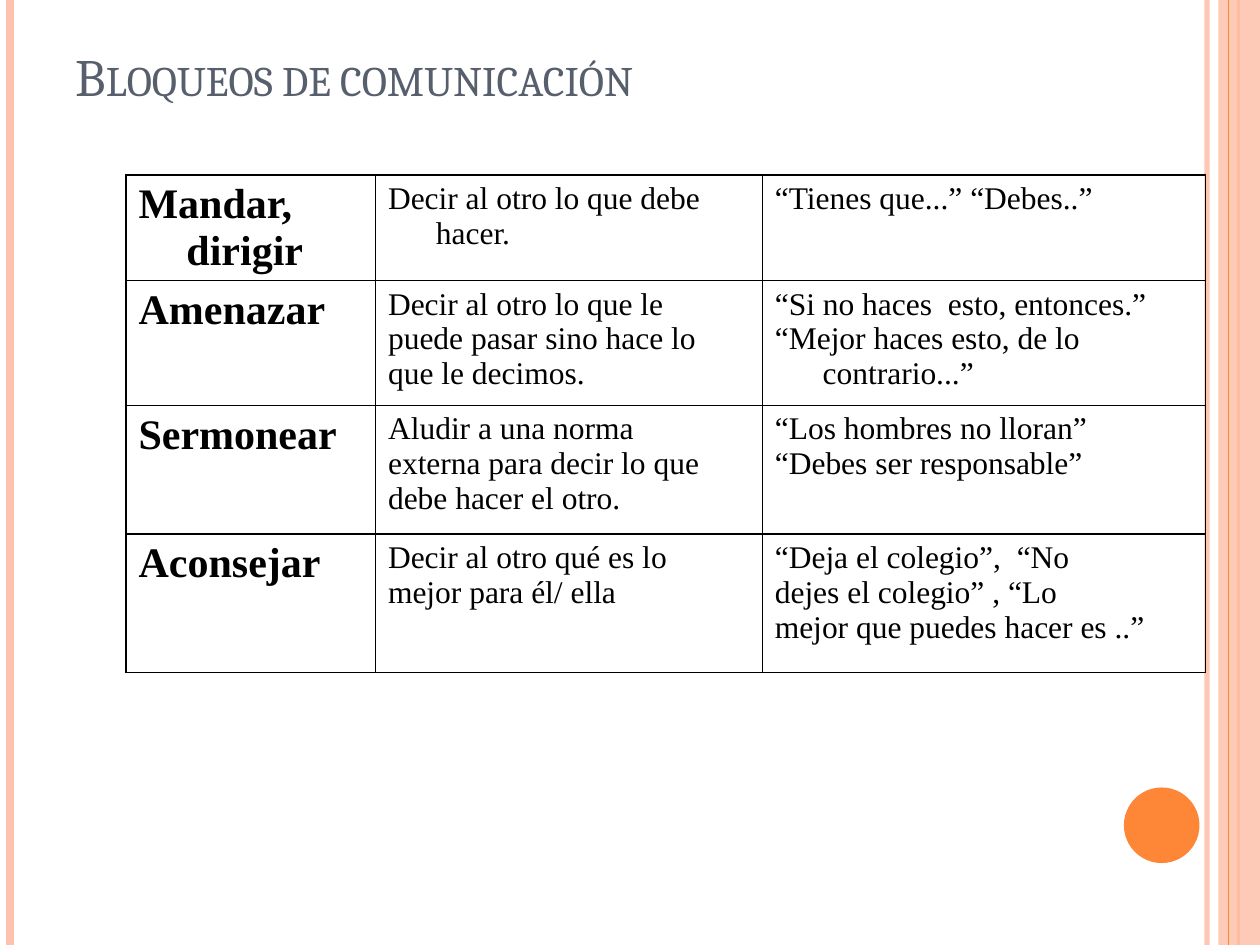
from dataclasses import dataclass

from lxml.etree import SubElement
from pptx import Presentation
from pptx.dml.color import RGBColor
from pptx.enum.shapes import MSO_CONNECTOR as Connector, MSO_SHAPE as Preset
from pptx.enum.text import MSO_ANCHOR as Anchor, PP_ALIGN as Align
from pptx.oxml.ns import qn
from pptx.util import Inches, Pt

COLORS = {"peach": "FEC3AE", "orange": "FE8637", "slate": "575F6D", "black": "000000"}
SLIDE_WIDTH, SLIDE_HEIGHT = 10, 7.5
COLUMN_WIDTHS = (1.98, 3.07, 3.52)
HANGING_INDENT = 0.38


@dataclass
class Stripe:
    x: float
    color: str
    weight: float
    opacity: int = 100


@dataclass
class Block:
    name: str
    meaning: list[str]
    examples: list[str]
    height: float
    align: Align = Align.LEFT


BACK_STRIPES = [
    Stripe(9.58, "peach", 3, 93),
    Stripe(0.08, "peach", 4.5),
    Stripe(9.83, "orange", 1.5),
]
FRONT_STRIPE = Stripe(9.75, "orange", 0.75)

BLOCKS = [
    Block("Mandar, dirigir", ["Decir al otro lo que debe hacer."],
          ["“Tienes que...” “Debes..”"], 0.83),
    Block("Amenazar",
          ["Decir al otro lo que le", "puede pasar sino hace lo", "que le decimos."],
          ["“Si no haces  esto, entonces.”", "“Mejor haces esto, de lo contrario...”"], 0.99),
    Block("Sermonear",
          ["Aludir a una norma", "externa para decir lo que", "debe hacer el otro."],
          ["“Los hombres no lloran”", "“Debes ser responsable”"], 1.02),
    Block("Aconsejar", ["Decir al otro qué es lo", "mejor para él/ ella"],
          ["“Deja el colegio”,  “No", "dejes el colegio” , “Lo", "mejor que puedes hacer es ..”"],
          1.1, Align.JUSTIFY),
]


def rgb(name: str) -> RGBColor:
    return RGBColor.from_string(COLORS[name])


def set_opacity(properties, percent: int) -> None:
    color = next(properties.iter(qn("a:srgbClr")))
    SubElement(color, qn("a:alpha"), val=str(percent * 1000))


def draw_stripe(slide, stripe: Stripe) -> None:
    x = Inches(stripe.x)
    line = slide.shapes.add_connector(Connector.STRAIGHT, x, 0, x, Inches(SLIDE_HEIGHT))
    line.line.color.rgb = rgb(stripe.color)
    line.line.width = Pt(stripe.weight)
    properties = line._element.spPr
    if stripe.opacity < 100:
        set_opacity(properties, stripe.opacity)
    SubElement(properties, qn("a:effectLst"))


def draw_shape(slide, preset: Preset, box: tuple, color: str, opacity: int = 100) -> None:
    shape = slide.shapes.add_shape(preset, *map(Inches, box))
    shape.shadow.inherit = False
    shape.fill.solid()
    shape.fill.fore_color.rgb = rgb(color)
    shape.line.fill.background()
    if opacity < 100:
        set_opacity(shape._element.spPr, opacity)


def add_text(paragraph, text: str, *, size: float, font: str, color: str,
             bold: bool = False, small_caps: bool = False, align: Align = Align.LEFT) -> None:
    paragraph.alignment = align
    run = paragraph.add_run()
    run.text = text
    run.font.size = Pt(size)
    run.font.name = font
    run.font.bold = bold
    run.font.color.rgb = rgb(color)
    if small_caps:
        run.font._element.set("cap", "small")


def draw_borders(cell) -> None:
    properties = cell._tc.get_or_add_tcPr()
    for position, side in enumerate(("a:lnL", "a:lnR", "a:lnT", "a:lnB")):
        border = SubElement(properties, qn(side), w=str(Pt(1)))
        fill = SubElement(border, qn("a:solidFill"))
        SubElement(fill, qn("a:srgbClr"), val=COLORS["black"])
        properties.insert(position, border)


def fill_cell(cell, lines: list[str], size: float, bold: bool, align: Align) -> None:
    cell.fill.background()
    draw_borders(cell)
    frame = cell.text_frame
    for index, text in enumerate(lines):
        paragraph = frame.add_paragraph() if index else frame.paragraphs[0]
        add_text(paragraph, text, size=size, font="Times New Roman", color="black",
                 bold=bold, align=align)
        properties = paragraph._p.get_or_add_pPr()
        properties.set("marL", str(Inches(HANGING_INDENT)))
        properties.set("indent", str(-Inches(HANGING_INDENT)))


def draw_table(slide, blocks: list[Block]) -> None:
    width, height = sum(COLUMN_WIDTHS), sum(block.height for block in blocks)
    frame = slide.shapes.add_table(len(blocks), len(COLUMN_WIDTHS), Inches(1), Inches(1.39),
                                   Inches(width), Inches(height))
    table = frame.table
    table.first_row = table.horz_banding = False
    for column, column_width in zip(table.columns, COLUMN_WIDTHS):
        column.width = Inches(column_width)
    for row, block in zip(table.rows, blocks):
        row.height = Inches(block.height)
        name, meaning, examples = row.cells
        fill_cell(name, [block.name], 24, True, block.align)
        fill_cell(meaning, block.meaning, 18, False, Align.LEFT)
        fill_cell(examples, block.examples, 18, False, Align.LEFT)


def write_title(slide, text: str) -> None:
    title = slide.shapes.title
    title.left, title.top, title.width, title.height = map(Inches, (0.5, 0.3, 9, 1.25))
    title.text_frame.vertical_anchor = Anchor.TOP
    add_text(title.text_frame.paragraphs[0], text, size=30, font="Cambria",
             color="slate", small_caps=True)


def main() -> None:
    """Build the slide on communication blocks and save it."""
    presentation = Presentation()
    presentation.slide_width = Inches(SLIDE_WIDTH)
    presentation.slide_height = Inches(SLIDE_HEIGHT)
    slide = presentation.slides.add_slide(presentation.slide_layouts[5])
    for stripe in BACK_STRIPES:
        draw_stripe(slide, stripe)
    draw_shape(slide, Preset.RECTANGLE, (9.67, 0, 0.33, SLIDE_HEIGHT), "peach", 87)
    draw_stripe(slide, FRONT_STRIPE)
    draw_shape(slide, Preset.OVAL, (8.92, 6.25, 0.6, 0.6), "orange")
    write_title(slide, "Bloqueos de comunicación")
    draw_table(slide, BLOCKS)
    presentation.save("out.pptx")


if __name__ == "__main__":
    main()
